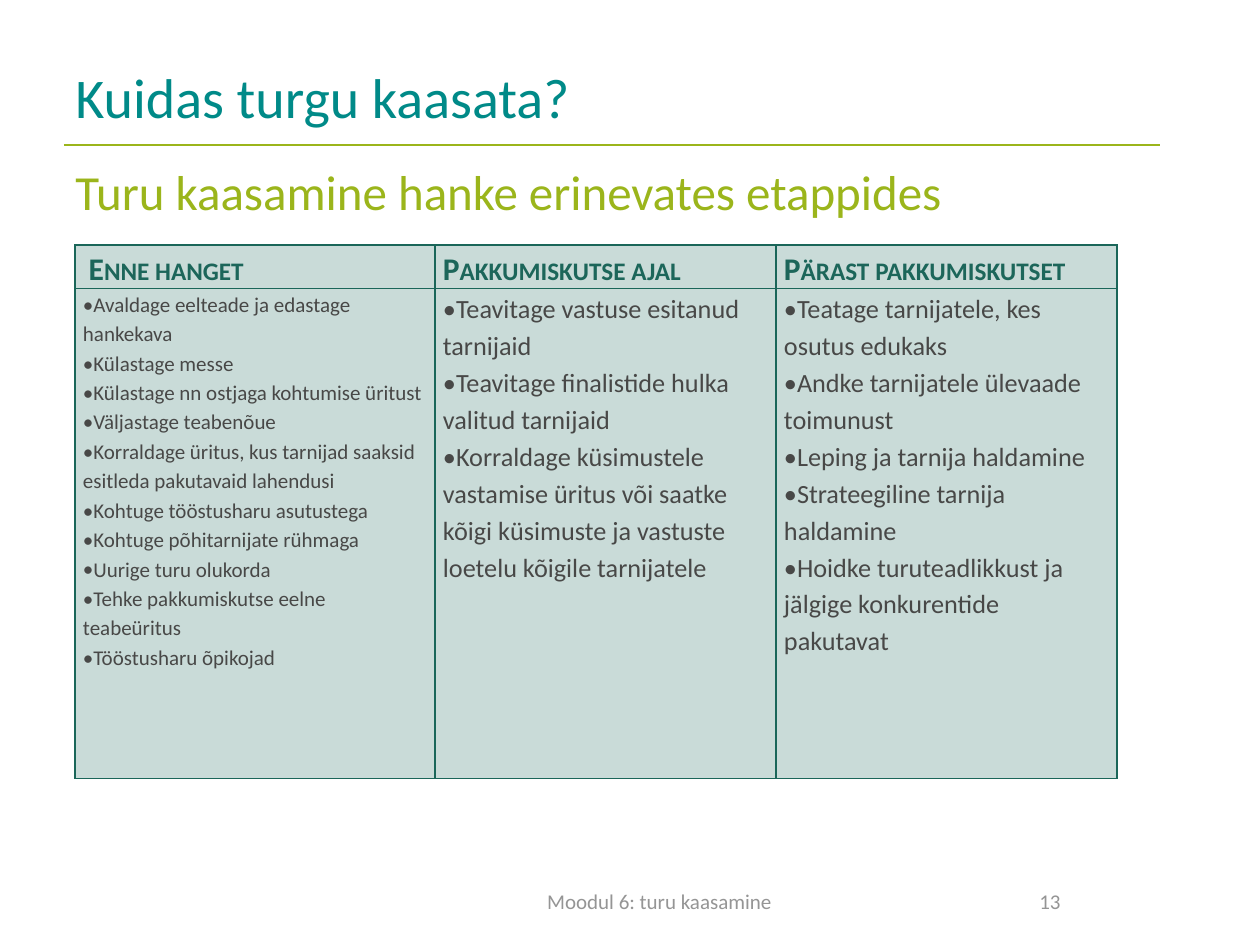
from lxml.etree import SubElement
from pptx import Presentation
from pptx.dml.color import RGBColor
from pptx.enum.shapes import MSO_CONNECTOR as Connector
from pptx.enum.text import MSO_ANCHOR as Anchor, PP_ALIGN as Align
from pptx.oxml.ns import qn
from pptx.util import Pt

EMU_PER_PX = 914400 / 126
TEAL, LIME, GREY = "008A88", "9BB51B", "959595"
BORDER, HEADING, BODY, TINT = "1A6659", "1C665A", "484847", "C9DBD8"

STAGES = [
    (" Enne hanget", 12, [
        "Avaldage eelteade ja edastage hankekava",
        "Külastage messe",
        "Külastage nn ostjaga kohtumise üritust",
        "Väljastage teabenõue",
        "Korraldage üritus, kus tarnijad saaksid esitleda pakutavaid lahendusi",
        "Kohtuge tööstusharu asutustega",
        "Kohtuge põhitarnijate rühmaga",
        "Uurige turu olukorda",
        "Tehke pakkumiskutse eelne teabeüritus",
        "Tööstusharu õpikojad",
    ]),
    ("Pakkumiskutse ajal", 15, [
        "Teavitage vastuse esitanud tarnijaid",
        "Teavitage finalistide hulka valitud tarnijaid",
        "Korraldage küsimustele vastamise üritus või saatke kõigi küsimuste "
        "ja vastuste loetelu kõigile tarnijatele",
    ]),
    ("Pärast pakkumiskutset", 15, [
        "Teatage tarnijatele, kes osutus edukaks",
        "Andke tarnijatele ülevaade toimunust",
        "Leping ja tarnija haldamine",
        "Strateegiline tarnija haldamine",
        "Hoidke turuteadlikkust ja jälgige konkurentide pakutavat",
    ]),
]


def px(length):
    return round(length * EMU_PER_PX)


def rgb(color):
    return RGBColor.from_string(color)


class SlideBuilder:
    """Holds the font and the current slide, and adds styled elements to it."""

    def __init__(self, slide, font="Calibri"):
        self.slide = slide
        self.font = font

    def style(self, paragraph, size, color, bold=False):
        for run in paragraph.runs:
            run.font.name = self.font
            run.font.size = Pt(size)
            run.font.bold = bold
            run.font.color.rgb = rgb(color)

    def text(self, box, wording, size, color, align=Align.LEFT, anchor=Anchor.MIDDLE):
        frame = self.slide.shapes.add_textbox(*map(px, box)).text_frame
        frame.word_wrap = True
        frame.vertical_anchor = anchor
        frame.text = wording
        frame.paragraphs[0].alignment = align
        self.style(frame.paragraphs[0], size, color)

    def rule(self, ends, color, width):
        rule = self.slide.shapes.add_connector(Connector.STRAIGHT, *map(px, ends))
        rule.line.color.rgb = rgb(color)
        rule.line.width = Pt(width)
        SubElement(rule._element.spPr, qn("a:effectLst"))

    def cell(self, cell):
        cell.margin_left = cell.margin_right = px(8)
        cell.margin_top = cell.margin_bottom = 0
        properties = cell._tc.get_or_add_tcPr()
        for side in ("lnL", "lnR", "lnT", "lnB"):
            edge = SubElement(properties, qn(f"a:{side}"), w=str(Pt(0.75)))
            paint = SubElement(edge, qn("a:solidFill"))
            SubElement(paint, qn("a:srgbClr"), val=BORDER)
        cell.fill.solid()
        cell.fill.fore_color.rgb = rgb(TINT)

    def heading(self, cell, wording):
        self.cell(cell)
        cell.text_frame.text = wording
        paragraph = cell.text_frame.paragraphs[0]
        paragraph.line_spacing = 1.15
        self.style(paragraph, 18, HEADING, bold=True)
        paragraph.runs[0]._r.get_or_add_rPr().set("cap", "small")

    def bullets(self, cell, items, size):
        self.cell(cell)
        cell.text_frame.text = "\n".join(items)
        for paragraph in cell.text_frame.paragraphs:
            paragraph.line_spacing = 1.15
            properties = paragraph._p.get_or_add_pPr()
            properties.set("marL", "0")
            properties.set("indent", str(-px(32)))
            SubElement(properties, qn("a:buFont"), typeface=self.font)
            SubElement(properties, qn("a:buChar"), char="•")
            self.style(paragraph, size, BODY)

    def table(self, left, top, widths, heights, stages):
        box = map(px, (left, top, sum(widths), sum(heights)))
        table = self.slide.shapes.add_table(len(heights), len(widths), *box).table
        for column, width in zip(table.columns, widths):
            column.width = px(width)
        for row, height in zip(table.rows, heights):
            row.height = px(height)
        for index, (title, size, items) in enumerate(stages):
            self.heading(table.cell(0, index), title)
            self.bullets(table.cell(1, index), items, size)


def main():
    deck = Presentation()
    deck.slide_width, deck.slide_height = px(1260), px(945)
    page = SlideBuilder(deck.slides.add_slide(deck.slide_layouts[6]))
    page.rule((64, 145, 1160, 145), LIME, 0.75)
    page.text((362, 876, 595, 50), "Moodul 6: turu kaasamine", 12, GREY, Align.CENTER)
    page.text((903, 876, 294, 50), "13", 12, GREY, Align.CENTER)
    page.text((63, 38, 1102, 117), "Kuidas turgu kaasata?", 32, TEAL)
    page.text((63, 155, 1101, 79), "Turu kaasamine hanke erinevates etappides",
              28, LIME, anchor=Anchor.TOP)
    page.table(75, 245, (360, 341, 341), (35, 490), STAGES)
    deck.save("out.pptx")


if __name__ == "__main__":
    main()
